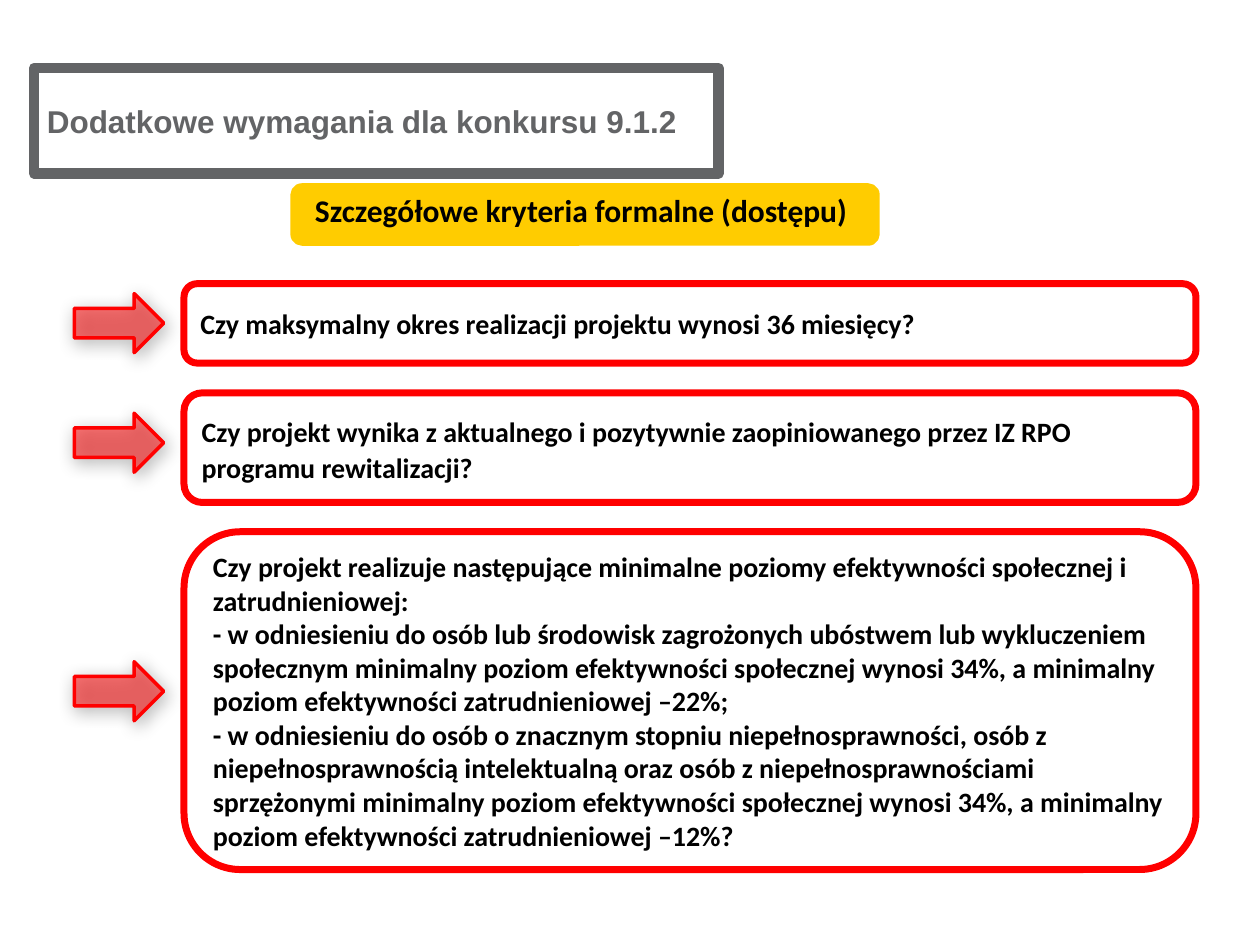
"""Build the slide with the formal access criteria of competition 9.1.2."""
from lxml import etree
from pptx import Presentation
from pptx.dml.color import RGBColor
from pptx.enum.shapes import MSO_SHAPE as SHAPE
from pptx.enum.text import MSO_ANCHOR as ANCHOR, MSO_AUTO_SIZE as AUTO, PP_ALIGN as ALIGN
from pptx.oxml.ns import qn
from pptx.util import Cm, Pt

COLORS = {"red": "FF0000", "yellow": "FFCC00", "gray": "636466", "black": "000000"}
BOX_LEFT, BOX_WIDTH = 3.71, 20.4
ARROW_LEFT, ARROW_WIDTH, ARROW_HEIGHT = 1.5, 1.8, 1.19

CRITERIA = [
    (5.72, 1.6, 5.92, 1, ["Czy maksymalny okres realizacji projektu wynosi 36 miesięcy?"]),
    (7.92, 2.21, 8.33, 1.1, [
        "Czy projekt wynika z aktualnego i pozytywnie zaopiniowanego przez IZ RPO "
        "programu rewitalizacji?"]),
    (10.72, 6.81, 13.34, 1, [
        "Czy projekt realizuje następujące minimalne poziomy efektywności społecznej i "
        "zatrudnieniowej:",
        "- w odniesieniu do osób lub środowisk zagrożonych ubóstwem lub wykluczeniem "
        "społecznym minimalny poziom efektywności społecznej wynosi 34%, a minimalny "
        "poziom efektywności zatrudnieniowej –22%;",
        "- w odniesieniu do osób o znacznym stopniu niepełnosprawności, osób z "
        "niepełnosprawnością intelektualną oraz osób z niepełnosprawnościami "
        "sprzężonymi minimalny poziom efektywności społecznej wynosi 34%, a minimalny "
        "poziom efektywności zatrudnieniowej –12%?"]),
]


def rgb(name):
    return RGBColor.from_string(COLORS[name])


def write(tf, lines, size, font="Calibri", color="black", spacing=1):
    tf.word_wrap = True
    tf.text = "\n".join(lines)
    for p in tf.paragraphs:
        p.alignment = ALIGN.LEFT
        p.line_spacing = spacing
        for r in p.runs:
            r.font.name, r.font.size, r.font.bold = font, Pt(size), True
            r.font.color.rgb = rgb(color)


def add_shape(s, kind, box, line, width, fill=None):
    sp = s.shapes.add_shape(kind, *map(Cm, box))
    sp.shadow.inherit = False
    if fill:
        sp.fill.solid()
        sp.fill.fore_color.rgb = rgb(fill)
    else:
        sp.fill.background()
    sp.line.color.rgb = rgb(line)
    sp.line.width = Pt(width)
    return sp


def add_arrow(s, top):
    box = (ARROW_LEFT, top, ARROW_WIDTH, ARROW_HEIGHT)
    sp = add_shape(s, SHAPE.RIGHT_ARROW, box, "red", 2, "red")
    spPr = sp._element.spPr
    fill = spPr.find(qn("a:solidFill")).find(qn("a:srgbClr"))
    etree.SubElement(fill, qn("a:alpha"), val="52000")
    shadow = etree.SubElement(spPr.find(qn("a:effectLst")), qn("a:outerShdw"),
                              blurRad=str(Pt(10)), dist=str(Pt(3)), dir="3600000",
                              rotWithShape="0")
    color = etree.SubElement(shadow, qn("a:srgbClr"), val=COLORS["black"])
    etree.SubElement(color, qn("a:alpha"), val="40000")


def add_criterion(s, top, height, spacing, lines):
    box = (BOX_LEFT, top, BOX_WIDTH, height)
    sp = add_shape(s, SHAPE.ROUNDED_RECTANGLE, box, "red", 4)
    sp.text_frame.vertical_anchor = ANCHOR.MIDDLE
    write(sp.text_frame, lines, 16, spacing=spacing)


def add_title(s):
    sp = s.shapes.title
    sp.left, sp.top, sp.width, sp.height = map(Cm, (0.69, 1.37, 13.79, 2.13))
    sp.line.color.rgb = rgb("gray")
    sp.line.width = Pt(6)
    tf = sp.text_frame
    tf.auto_size = AUTO.NONE
    tf.vertical_anchor = ANCHOR.MIDDLE
    write(tf, ["Dodatkowe wymagania dla konkursu 9.1.2"], 18, "Arial", "gray")


def add_heading(s):
    add_shape(s, SHAPE.ROUNDED_RECTANGLE, (5.89, 3.73, 11.81, 1.19), "yellow", 2, "yellow")
    sp = s.shapes.add_textbox(*map(Cm, (6.1, 3.73, 11.81, 1.02)))
    write(sp.text_frame, ["Szczegółowe kryteria formalne (dostępu)"], 18)


def main():
    prs = Presentation()
    prs.slide_width, prs.slide_height = Cm(25.4), Cm(19.05)
    s = prs.slides.add_slide(prs.slide_layouts[5])
    add_title(s)
    add_heading(s)
    for top, height, arrow_top, spacing, lines in CRITERIA:
        add_criterion(s, top, height, spacing, lines)
        add_arrow(s, arrow_top)
    prs.save("out.pptx")


if __name__ == "__main__":
    main()
